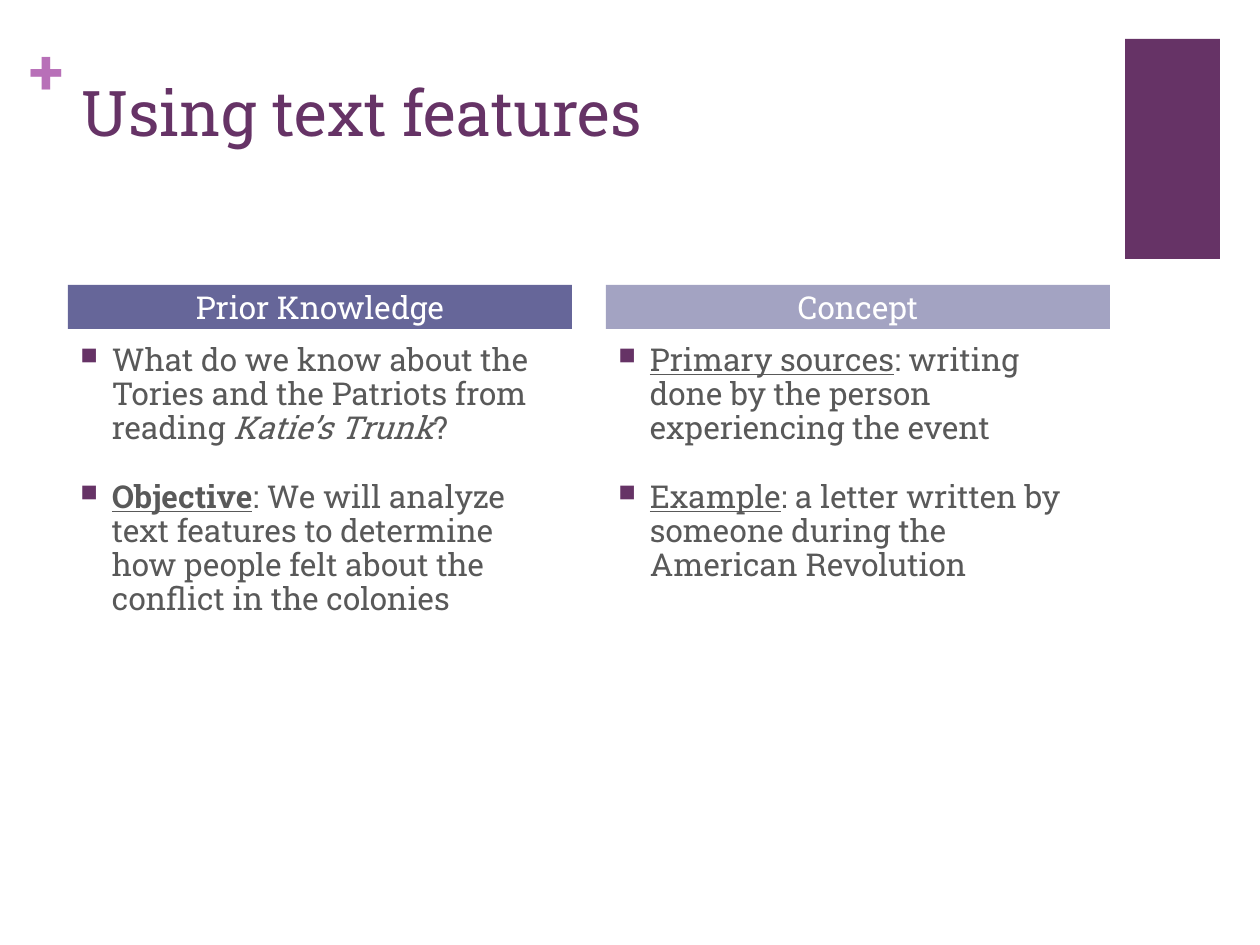
from lxml import etree
from pptx import Presentation
from pptx import util as u
from pptx.dml.color import RGBColor
from pptx.enum import shapes, text
from pptx.oxml.ns import qn

PX = 914400 / 126
FONT = "Roboto Slab"
PLUM = RGBColor(0x66, 0x33, 0x66)
ORCHID = RGBColor(0xB8, 0x70, 0xB8)
SLATE = RGBColor(0x66, 0x66, 0x99)
LAVENDER = RGBColor(0xA3, 0xA3, 0xC2)
GREY = RGBColor(0x59, 0x59, 0x59)
WHITE = RGBColor(0xFF, 0xFF, 0xFF)

COLUMN_LEFT, COLUMN_STEP, COLUMN_WIDTH = 68, 538, 504
# Each paragraph is a list of (wording, font attributes to switch on).
COLUMNS = [
    ("Prior Knowledge", SLATE, [
        [("What do we know about the Tories and the Patriots from reading ", ()),
         ("Katie’s Trunk", ("italic",)), ("?", ())],
        [("Objective", ("bold", "underline")),
         (": We will analyze text features to determine how people felt "
          "about the conflict in the colonies", ())],
    ]),
    ("Concept", LAVENDER, [
        [("Primary sources", ("underline",)),
         (": writing done by the person experiencing the event", ())],
        [("Example", ("underline",)),
         (": a letter written by someone during the American Revolution", ())],
    ]),
]


def px(*lengths):
    return [u.Emu(round(length * PX)) for length in lengths]


def style(span, size, color, *attributes):
    span.font.name = FONT
    span.font.size = u.Pt(size)
    span.font.color.rgb = color
    for attribute in attributes:
        setattr(span.font, attribute, True)


def add_block(page, left, top, width, height, color):
    block = page.shapes.add_shape(shapes.MSO_SHAPE.RECTANGLE,
                                  *px(left, top, width, height))
    block.shadow.inherit = False
    block.fill.solid()
    block.fill.fore_color.rgb = color
    block.line.fill.background()
    return block


def add_plus(page):
    box = page.shapes.add_textbox(*px(30, 32, 37, 77))
    frame = box.text_frame
    frame.margin_left = frame.margin_right = 0
    frame.margin_top = frame.margin_bottom = 0
    frame.text = "+"
    style(frame.paragraphs[0].runs[0], 36, ORCHID, "bold")


def set_title(page, wording):
    title = page.shapes.title
    title.left, title.top, title.width, title.height = px(69, 67, 1041, 154)
    frame = title.text_frame
    frame.text = wording
    frame.vertical_anchor = text.MSO_ANCHOR.TOP
    para = frame.paragraphs[0]
    para.alignment = text.PP_ALIGN.LEFT
    style(para.runs[0], 36, PLUM)


def add_header(page, left, wording, color):
    frame = add_block(page, left, 285, COLUMN_WIDTH, 44, color).text_frame
    frame.margin_top = frame.margin_bottom = 0
    frame.vertical_anchor = text.MSO_ANCHOR.MIDDLE
    frame.text = wording
    para = frame.paragraphs[0]
    para.alignment = text.PP_ALIGN.CENTER
    style(para.runs[0], 18, WHITE)


def set_bullet(para):
    """Give the paragraph a small square bullet with a hanging indent."""
    props = para._p.get_or_add_pPr()
    indent = u.Inches(0.25)
    props.set("marL", str(indent))
    props.set("indent", str(-indent))
    color = etree.SubElement(props, qn("a:buClr"))
    etree.SubElement(color, qn("a:srgbClr"), val=str(PLUM))
    etree.SubElement(props, qn("a:buSzPct"), val="75000")
    etree.SubElement(props, qn("a:buChar"), char="■")


def add_bullets(page, left, paragraphs):
    box = page.shapes.add_textbox(*px(left, 338, COLUMN_WIDTH, 506))
    frame = box.text_frame
    frame.word_wrap = True
    for index, pieces in enumerate(paragraphs):
        para = frame.add_paragraph() if index else frame.paragraphs[0]
        para.line_spacing = 0.9
        para.space_before = u.Pt(20)
        set_bullet(para)
        for wording, attributes in pieces:
            span = para.add_run()
            span.text = wording
            style(span, 18, GREY, *attributes)


def main():
    deck = Presentation()
    deck.slide_width, deck.slide_height = px(1260, 945)
    page = deck.slides.add_slide(deck.slide_layouts.get_by_name("Title Only"))
    add_block(page, 1125, 39, 95, 220, PLUM)
    add_plus(page)
    set_title(page, "Using text features")
    for index, (heading, color, paragraphs) in enumerate(COLUMNS):
        left = COLUMN_LEFT + index * COLUMN_STEP
        add_bullets(page, left, paragraphs)
        add_header(page, left, heading, color)
    deck.save("out.pptx")


if __name__ == "__main__":
    main()
